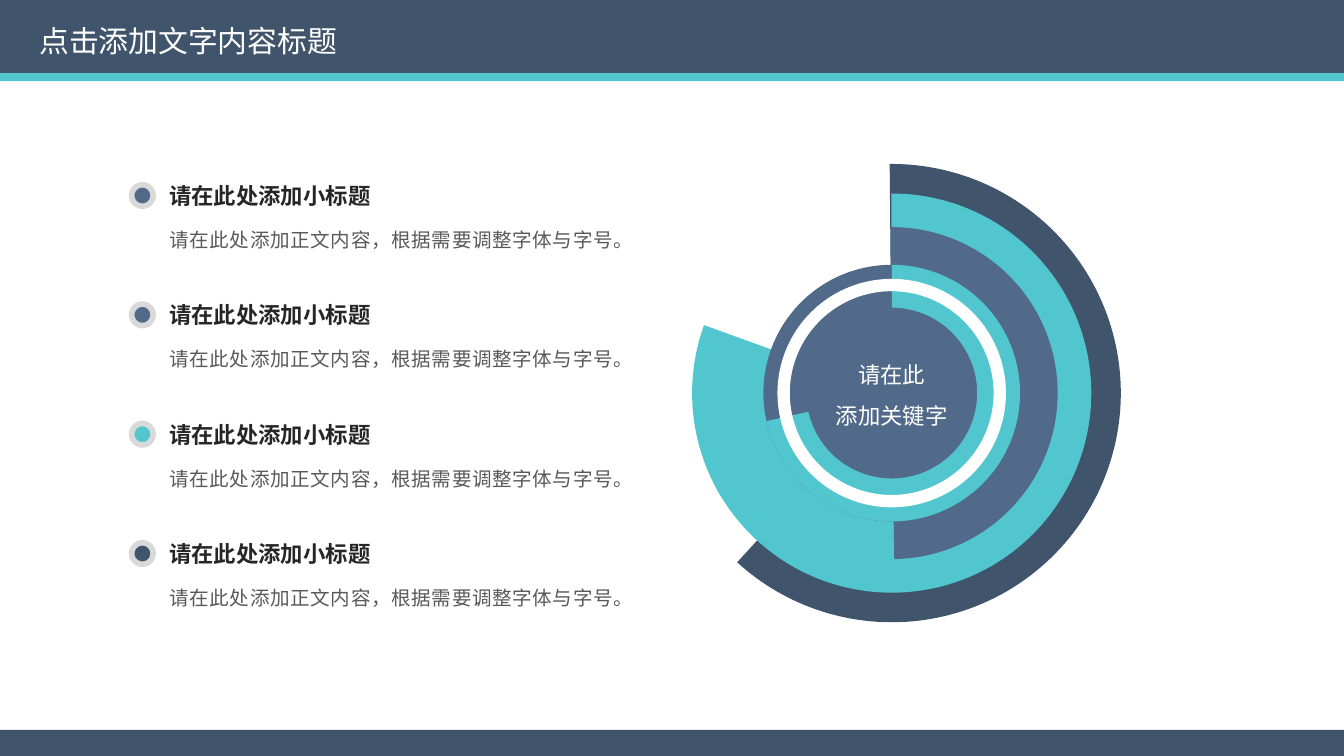
from pptx import Presentation
from pptx.dml.color import RGBColor
from pptx.enum.shapes import MSO_SHAPE as Preset
from pptx.enum.text import MSO_AUTO_SIZE as AutoSize, PP_ALIGN as Align
from pptx.util import Inches, Pt

WIDTH = 10
HEIGHT = WIDTH * 9 / 16
COLUMNS = 100  # square grid cells across the slide
FONT = "Noto Sans CJK SC"
NAVY, BLUE, TEAL = "40546C", "516A89", "51C6CF"
WHITE, LIGHT_GRAY, GRAY, BLACK = "FFFFFF", "D9D9D9", "595959", "262626"

CENTER_X, CENTER_Y = 66.35, 29.25
# diameter, start and end angle in degrees, thickness as share of diameter, colour
OUTER_ARCS = [
    (34.1, 269.5, 132.4, 0.263, NAVY),
    (29.7, 269.9, 199.9, 0.239, TEAL),
    (24.7, 269.7, 89.1, 0.166, BLUE),
]
HUB_DIAMETER = 19.1
HUB_ARC = (HUB_DIAMETER, 270.1, 167.4, 0.167, TEAL)

FIRST_ITEM_ROW, ITEM_PITCH = 13.05, 8.88
BULLET_COLORS = [BLUE, BLUE, TEAL, NAVY]


def cells(count):
    return Inches(count * WIDTH / COLUMNS)


def color(hex_string):
    return RGBColor.from_string(hex_string)


def add_filled(slide, preset, left, top, width, height, fill):
    shape = slide.shapes.add_shape(preset, *map(cells, (left, top, width, height)))
    shape.shadow.inherit = False
    shape.fill.solid()
    shape.fill.fore_color.rgb = color(fill)
    shape.line.fill.background()
    return shape


def add_centered(slide, preset, diameter, fill):
    """Add a round shape that shares the centre of the ring chart."""
    radius = diameter / 2
    return add_filled(slide, preset, CENTER_X - radius, CENTER_Y - radius,
                      diameter, diameter, fill)


def add_arc(slide, diameter, start, end, thickness, fill):
    arc = add_centered(slide, Preset.BLOCK_ARC, diameter, fill)
    # Angles are stored in 1/60000 degree, adjustments in 1/100000.
    arc.adjustments[0] = start * 0.6
    arc.adjustments[1] = end * 0.6
    arc.adjustments[2] = thickness


def add_text(slide, left, top, width, height, lines, size, fill,
             bold=False, align=Align.LEFT, spacing=1.0, wrap=True):
    box = slide.shapes.add_textbox(*map(cells, (left, top, width, height)))
    frame = box.text_frame
    frame.word_wrap = wrap
    frame.auto_size = AutoSize.SHAPE_TO_FIT_TEXT
    frame.text = "\n".join(lines)
    for paragraph in frame.paragraphs:
        paragraph.alignment = align
        paragraph.line_spacing = spacing
        font = paragraph.font
        font.name, font.size, font.bold = FONT, Pt(size), bold
        font.color.rgb = color(fill)


def add_bars(slide):
    for top, height, fill in [(0, 5.45, NAVY), (5.45, 0.6, TEAL), (54.3, 2.1, NAVY)]:
        add_filled(slide, Preset.RECTANGLE, 0, top, COLUMNS, height, fill)


def add_ring_chart(slide):
    for arc in OUTER_ARCS:
        add_arc(slide, *arc)
    add_centered(slide, Preset.OVAL, HUB_DIAMETER, BLUE)
    add_arc(slide, *HUB_ARC)
    ring = add_centered(slide, Preset.DONUT, 17, WHITE)
    ring.adjustments[0] = 0.054
    add_text(slide, 60.65, 25.4, 11.4, 6.7, ["请在此", "添加关键字"], 12, WHITE,
             align=Align.CENTER, spacing=1.5)


def add_item(slide, top, bullet_color):
    bullet = add_filled(slide, Preset.OVAL, 9.8, top + 0.7, 1.6, 1.6, bullet_color)
    bullet.line.color.rgb = color(LIGHT_GRAY)
    bullet.line.width = Pt(3)
    add_text(slide, 11.6, top, 24.9, 3, ["请在此处添加小标题"], 12, BLACK, bold=True)
    add_text(slide, 11.6, top + 2.55, 35.1, 3.7,
             ["请在此处添加正文内容，根据需要调整字体与字号。"], 10.5, GRAY,
             align=Align.JUSTIFY, spacing=1.5)


def main():
    presentation = Presentation()
    presentation.slide_width = Inches(WIDTH)
    presentation.slide_height = Inches(HEIGHT)
    slide = presentation.slides.add_slide(presentation.slide_layouts[6])
    add_bars(slide)
    add_ring_chart(slide)
    for index, bullet_color in enumerate(BULLET_COLORS):
        add_item(slide, FIRST_ITEM_ROW + index * ITEM_PITCH, bullet_color)
    add_text(slide, 1.95, 1.2, 24.5, 3.7, ["点击添加文字内容标题"], 16, WHITE, wrap=False)
    presentation.save("out.pptx")


if __name__ == "__main__":
    main()
